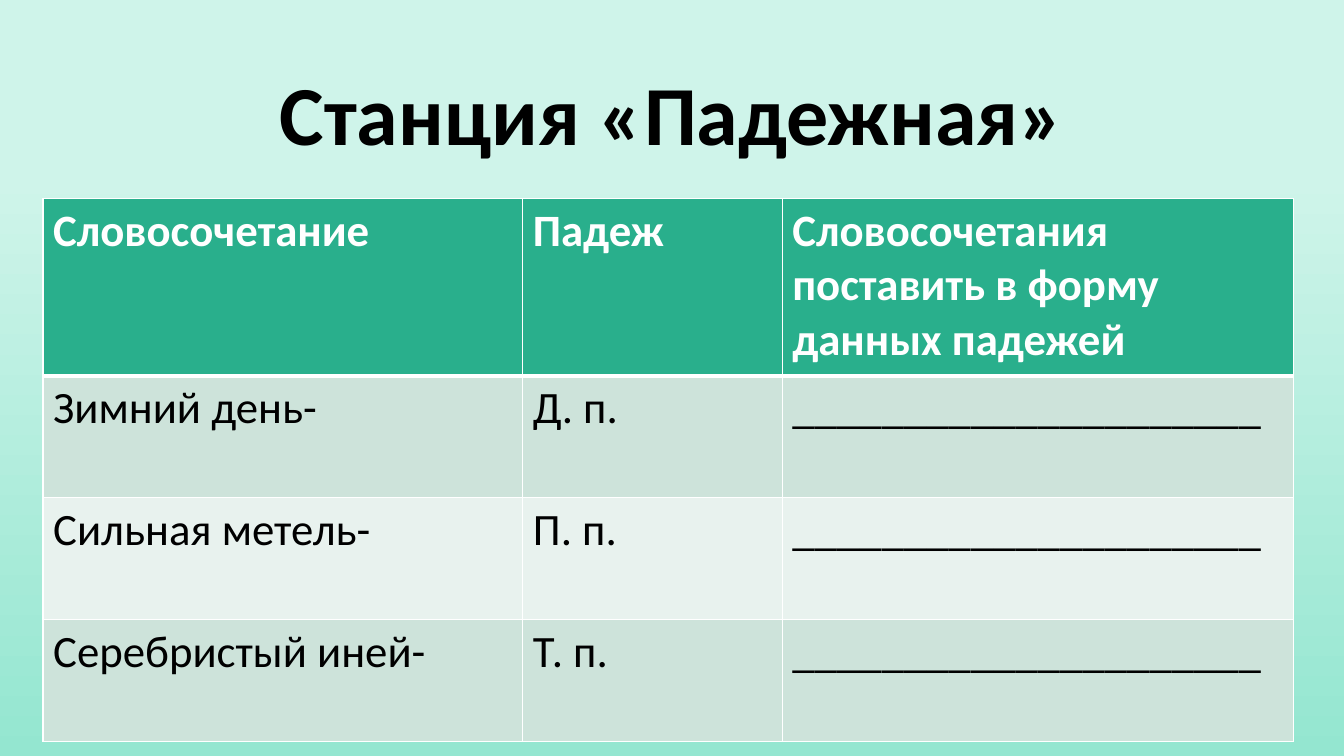
import dataclasses

import lxml.etree
import pptx
import pptx.dml.color
import pptx.enum.text
import pptx.oxml.ns
import pptx.util

RGBColor = pptx.dml.color.RGBColor

EMU_PER_PX = 9525
FONT = "Calibri"
BLACK = RGBColor(0x00, 0x00, 0x00)
WHITE = RGBColor(0xFF, 0xFF, 0xFF)
GREEN = RGBColor(0x29, 0xAF, 0x8C)
SAGE = RGBColor(0xCD, 0xE3, 0xDA)
PALE_SAGE = RGBColor(0xE8, 0xF2, 0xEE)
SKY_TOP = RGBColor(0xCF, 0xF4, 0xEA)
SKY_BOTTOM = RGBColor(0x94, 0xE6, 0xD0)

ANSWER_LINE = "_" * 21
COLUMN_WIDTHS = (457, 247, 487)


@dataclasses.dataclass(frozen=True)
class TableRow:
    texts: tuple[str, str, str]
    fill: RGBColor
    height: int = 116
    color: RGBColor = BLACK
    bold: bool = False
    top_border: int = 1
    bottom_border: int = 1


ROWS = (
    TableRow(
        ("Словосочетание", "Падеж", "Словосочетания поставить в форму данных падежей"),
        GREEN, height=169, color=WHITE, bold=True, bottom_border=3,
    ),
    TableRow(("Зимний день-", "Д. п.", ANSWER_LINE), SAGE, top_border=3),
    TableRow(("Сильная метель-", "П. п.", ANSWER_LINE), PALE_SAGE),
    TableRow(("Серебристый иней-", "Т. п.", ANSWER_LINE), SAGE),
)


def px(length: int) -> pptx.util.Emu:
    return pptx.util.Emu(length * EMU_PER_PX)


def write_text(
    frame,
    text: str,
    *,
    size: int,
    color: RGBColor,
    bold: bool = False,
    align=pptx.enum.text.PP_ALIGN.LEFT,
    line_spacing: float = 1.0,
) -> None:
    frame.word_wrap = True
    para = frame.paragraphs[0]
    para.alignment = align
    para.line_spacing = line_spacing
    span = para.add_run()
    span.text = text
    span.font.name = FONT
    span.font.size = pptx.util.Pt(size)
    span.font.bold = bold
    span.font.color.rgb = color


def add_border(cell, side: str, width: int) -> None:
    qn = pptx.oxml.ns.qn
    properties = cell._tc.get_or_add_tcPr()
    line = lxml.etree.SubElement(properties, qn(f"a:{side}"), w=str(pptx.util.Pt(width)))
    fill = lxml.etree.SubElement(line, qn("a:solidFill"))
    lxml.etree.SubElement(fill, qn("a:srgbClr"), val=str(WHITE))


def paint_background(page) -> None:
    fill = page.background.fill
    fill.gradient()
    fill.gradient_angle = 270
    stops = ((0.23, SKY_TOP), (1.0, SKY_BOTTOM))
    for stop, (position, color) in zip(fill.gradient_stops, stops):
        stop.position = position
        stop.color.rgb = color


def add_title(page) -> None:
    box = page.shapes.add_textbox(px(160), px(58), px(960), px(103))
    box.text_frame.vertical_anchor = pptx.enum.text.MSO_ANCHOR.BOTTOM
    write_text(
        box.text_frame, "Станция «Падежная»", size=60, color=BLACK, bold=True,
        align=pptx.enum.text.PP_ALIGN.CENTER, line_spacing=0.9,
    )


def add_case_table(page) -> None:
    table = page.shapes.add_table(
        len(ROWS), len(COLUMN_WIDTHS), px(41), px(189),
        px(sum(COLUMN_WIDTHS)), px(sum(row.height for row in ROWS)),
    ).table
    for column, width in zip(table.columns, COLUMN_WIDTHS):
        column.width = px(width)
    for table_row, row in zip(table.rows, ROWS):
        table_row.height = px(row.height)
        for cell, text in zip(table_row.cells, row.texts):
            borders = {"lnL": 1, "lnR": 1, "lnT": row.top_border, "lnB": row.bottom_border}
            for side, width in borders.items():
                add_border(cell, side, width)
            cell.fill.solid()
            cell.fill.fore_color.rgb = row.fill
            write_text(cell.text_frame, text, size=32, color=row.color, bold=row.bold)


def main() -> None:
    deck = pptx.Presentation()
    deck.slide_width = px(1280)
    deck.slide_height = px(720)
    page = deck.slides.add_slide(deck.slide_layouts[6])
    paint_background(page)
    add_title(page)
    add_case_table(page)
    deck.save("out.pptx")


if __name__ == "__main__":
    main()
